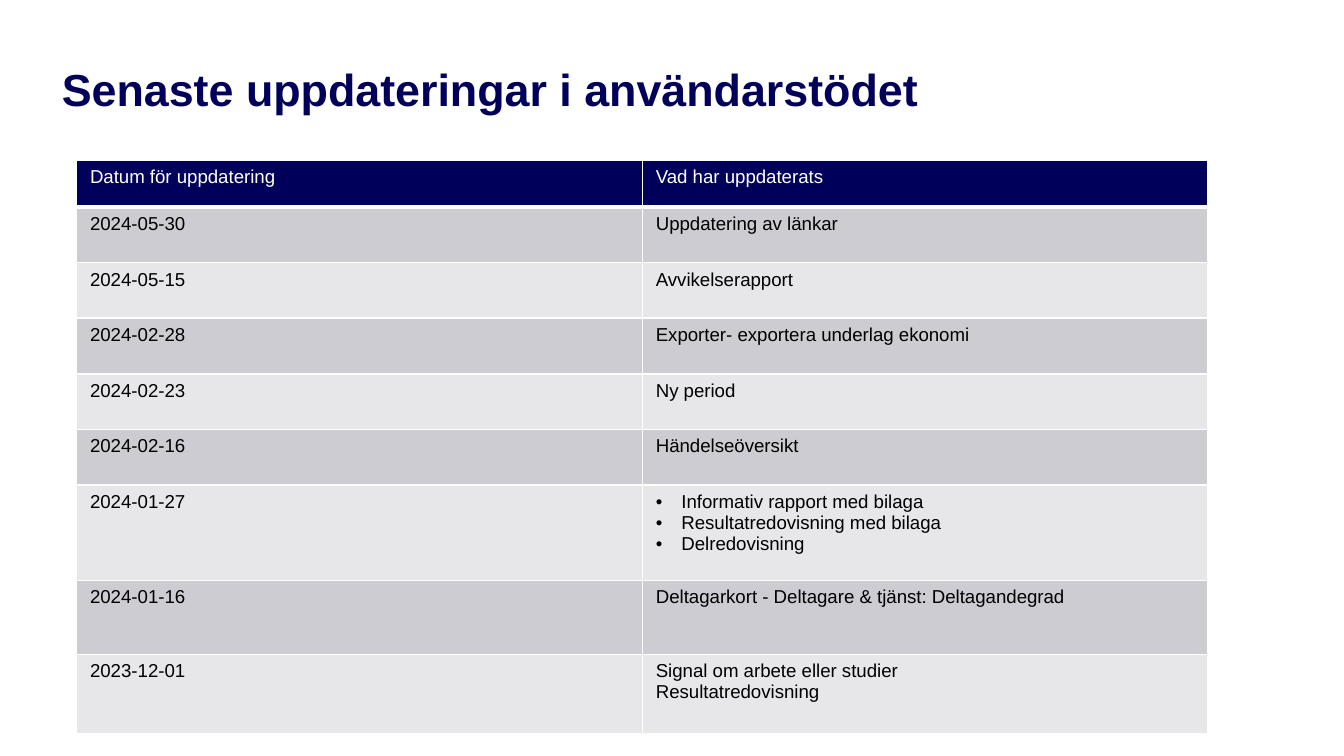
import pptx
import pptx.dml.color
import pptx.enum.text
import pptx.oxml.ns
import pptx.util
from lxml import etree
from pptx.util import Inches

NAVY = pptx.dml.color.RGBColor(0x00, 0x00, 0x5A)
WHITE = pptx.dml.color.RGBColor(0xFF, 0xFF, 0xFF)
BLACK = pptx.dml.color.RGBColor(0x00, 0x00, 0x00)
DARK_BAND = pptx.dml.color.RGBColor(0xCC, 0xCC, 0xD2)
LIGHT_BAND = pptx.dml.color.RGBColor(0xE7, 0xE7, 0xEA)
FONT = "Arial"

HEADINGS = ("Datum för uppdatering", ["Vad har uppdaterats"])
UPDATES = [
    ("2024-05-30", ["Uppdatering av länkar"]),
    ("2024-05-15", ["Avvikelserapport"]),
    ("2024-02-28", ["Exporter- exportera underlag ekonomi"]),
    ("2024-02-23", ["Ny period"]),
    ("2024-02-16", ["Händelseöversikt"]),
    ("2024-01-27", ["Informativ rapport med bilaga",
                    "Resultatredovisning med bilaga",
                    "Delredovisning"]),
    ("2024-01-16", ["Deltagarkort - Deltagare & tjänst: Deltagandegrad"]),
    ("2023-12-01", ["Signal om arbete eller studier", "Resultatredovisning"]),
]
BULLETED_DATE = "2024-01-27"
# The five single-line updates share 2.07 inches equally.
ROW_HEIGHTS = [0.35] + [2.07 / 5] * 5 + [0.71, 0.55, 0.59]


def add_child(parent, tag, **attributes):
    return etree.SubElement(parent, pptx.oxml.ns.qn(tag), attributes)


def set_font(paragraph, size, color, bold=False):
    font = paragraph.font
    font.name = FONT
    font.size = pptx.util.Pt(size)
    font.bold = bold
    font.color.rgb = color


def add_title(slide, text):
    box = slide.shapes.add_textbox(Inches(0.46), Inches(0.46), Inches(8.12), Inches(0.74))
    frame = box.text_frame
    frame.word_wrap = True
    frame.vertical_anchor = pptx.enum.text.MSO_ANCHOR.TOP
    frame.margin_left = frame.margin_right = frame.margin_top = frame.margin_bottom = 0
    frame.text = text
    set_font(frame.paragraphs[0], 24, NAVY, bold=True)


def set_borders(cell, top, bottom):
    """Draw white cell borders; top and bottom widths are in points."""
    properties = cell._tc.get_or_add_tcPr()
    for side, width in (("L", 1), ("R", 1), ("T", top), ("B", bottom)):
        line = add_child(properties, f"a:ln{side}", w=str(pptx.util.Pt(width)))
        fill = add_child(line, "a:solidFill")
        add_child(fill, "a:srgbClr", val=str(WHITE))


def add_bullet(paragraph):
    properties = paragraph._p.get_or_add_pPr()
    properties.set("marL", str(Inches(0.19)))
    properties.set("indent", str(-Inches(0.19)))
    add_child(properties, "a:buFont", typeface=FONT)
    add_child(properties, "a:buChar", char="•")


def fill_cell(cell, lines, background, color, bulleted=False):
    cell.fill.solid()
    cell.fill.fore_color.rgb = background
    cell.text = "\n".join(lines)
    for paragraph in cell.text_frame.paragraphs:
        if bulleted:
            add_bullet(paragraph)
        set_font(paragraph, 10, color)


def add_update_table(slide):
    rows = [HEADINGS] + UPDATES
    table = slide.shapes.add_table(
        len(rows), 2, Inches(0.57), Inches(1.19), Inches(8.42), Inches(sum(ROW_HEIGHTS))
    ).table
    for index, (date, changes) in enumerate(rows):
        table.rows[index].height = Inches(ROW_HEIGHTS[index])
        if index == 0:
            background, color = NAVY, WHITE
        else:
            background, color = (DARK_BAND if index % 2 else LIGHT_BAND), BLACK
        for column, lines in enumerate(([date], changes)):
            cell = table.cell(index, column)
            set_borders(cell, top=3 if index == 1 else 1, bottom=3 if index == 0 else 1)
            bulleted = column == 1 and date == BULLETED_DATE
            fill_cell(cell, lines, background, color, bulleted)


def main():
    presentation = pptx.Presentation()
    presentation.slide_width = Inches(10)
    presentation.slide_height = Inches(10 * 9 / 16)
    slide = presentation.slides.add_slide(presentation.slide_layouts[6])
    add_title(slide, "Senaste uppdateringar i användarstödet")
    add_update_table(slide)
    presentation.save("out.pptx")


if __name__ == "__main__":
    main()
